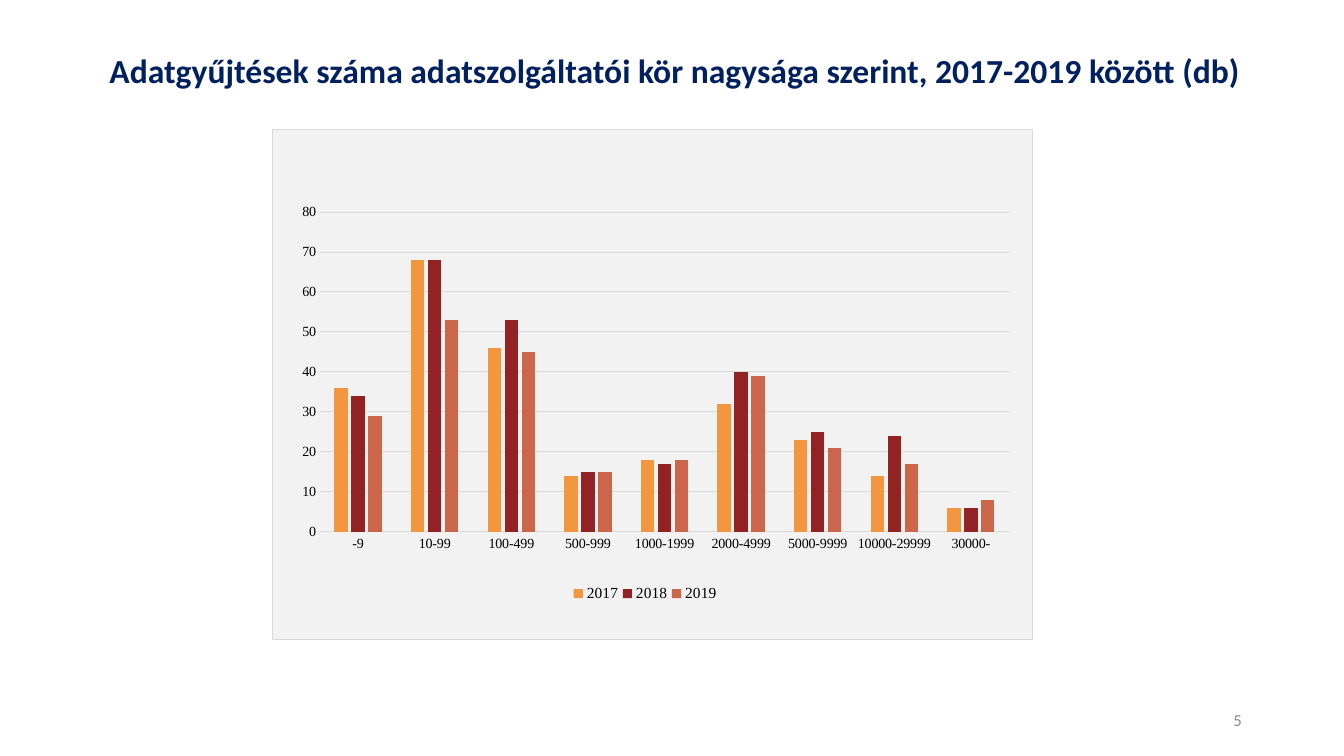
from pptx import Presentation
from pptx.chart.data import CategoryChartData
from pptx.dml.color import RGBColor
from pptx.enum.chart import XL_CHART_TYPE, XL_LEGEND_POSITION, XL_TICK_MARK
from pptx.enum.text import MSO_ANCHOR, PP_ALIGN
from pptx.oxml import parse_xml
from pptx.oxml.ns import nsdecls
from pptx.util import Cm, Pt

NAVY = RGBColor(0x00, 0x20, 0x60)
GREY = RGBColor(0x8C, 0x8C, 0x8C)
BLACK = RGBColor(0x00, 0x00, 0x00)
PANEL = RGBColor(0xF2, 0xF2, 0xF2)
RULE = RGBColor(0xD9, 0xD9, 0xD9)
ORANGE = RGBColor(0xF2, 0x96, 0x3F)
DARK_RED = RGBColor(0x92, 0x22, 0x24)
BRICK = RGBColor(0xCB, 0x66, 0x4B)

RESPONDENT_GROUPS = ["-9", "10-99", "100-499", "500-999", "1000-1999",
                     "2000-4999", "5000-9999", "10000-29999", "30000-"]
YEARS = [
    ("2017", ORANGE, [36, 68, 46, 14, 18, 32, 23, 14, 6]),
    ("2018", DARK_RED, [34, 68, 53, 15, 17, 40, 25, 24, 6]),
    ("2019", BRICK, [29, 53, 45, 15, 18, 39, 21, 17, 8]),
]


def set_font(font, name, size, color, bold=False):
    font.name = name
    font.size = Pt(size)
    font.bold = bold
    font.color.rgb = color


def set_line(line, color):
    line.color.rgb = color
    line.width = Pt(0.75)


def add_text(slide, box, text, size, color, alignment, bold=False):
    frame = slide.shapes.add_textbox(*box).text_frame
    frame.word_wrap = True
    frame.vertical_anchor = MSO_ANCHOR.MIDDLE
    paragraph = frame.paragraphs[0]
    paragraph.text = text
    paragraph.alignment = alignment
    paragraph.line_spacing = 0.9
    set_font(paragraph.font, "Calibri", size, color, bold)


def set_layout(parent, index, target="", **fractions):
    """Place a chart part by fractions of the chart area."""
    for layout in parent.xpath("c:layout"):
        parent.remove(layout)
    modes = "".join(f'<c:{axis}Mode val="edge"/>' for axis in "xy")
    sizes = "".join(f'<c:{key} val="{value}"/>' for key, value in fractions.items())
    parent.insert(index, parse_xml(
        f'<c:layout {nsdecls("c")}><c:manualLayout>{target}{modes}{sizes}'
        '</c:manualLayout></c:layout>'))


def fill_chart_area(chart):
    area = parse_xml(
        f'<c:spPr {nsdecls("c", "a")}>'
        f'<a:solidFill><a:srgbClr val="{PANEL}"/></a:solidFill>'
        f'<a:ln w="{Pt(0.75)}"><a:solidFill><a:srgbClr val="{RULE}"/></a:solidFill></a:ln>'
        '</c:spPr>')
    chart.element.xpath("c:chart")[0].addnext(area)


def style_axes(chart):
    for axis in (chart.category_axis, chart.value_axis):
        axis.major_tick_mark = axis.minor_tick_mark = XL_TICK_MARK.NONE
        set_font(axis.tick_labels.font, "Times New Roman", 10, BLACK)
    set_line(chart.category_axis.format.line, RULE)
    value_axis = chart.value_axis
    value_axis.format.line.fill.background()
    value_axis.minimum_scale, value_axis.maximum_scale = 0, 80
    value_axis.major_unit = 10
    value_axis.has_major_gridlines = True
    set_line(value_axis.major_gridlines.format.line, RULE)


def add_survey_chart(slide, box):
    data = CategoryChartData()
    data.categories = RESPONDENT_GROUPS
    for year, _, counts in YEARS:
        data.add_series(year, counts)
    chart = slide.shapes.add_chart(XL_CHART_TYPE.COLUMN_CLUSTERED, *box, data).chart
    chart.has_title = False
    set_font(chart.font, "Times New Roman", 10, BLACK)
    fill_chart_area(chart)
    style_axes(chart)

    plot = chart.plots[0]
    plot.vary_by_categories = False
    plot.gap_width = 219
    plot.overlap = -27
    for series, (_, color, _) in zip(plot.series, YEARS):
        series.format.fill.solid()
        series.format.fill.fore_color.rgb = color

    chart.has_legend = True
    chart.legend.position = XL_LEGEND_POSITION.BOTTOM
    chart.legend.include_in_layout = False
    set_font(chart.legend.font, "Times New Roman", 11, BLACK)

    set_layout(chart.element.xpath(".//c:plotArea")[0], 0,
               '<c:layoutTarget val="inner"/>', x=0.062, y=0.162, w=0.907, h=0.627)
    set_layout(chart.element.xpath(".//c:legend")[0], 1, x=0.39, y=0.88, w=0.2, h=0.06)


def build_slide(presentation):
    slide = presentation.slides.add_slide(presentation.slide_layouts[6])
    add_text(slide, (Cm(1.42), Cm(0.74), Cm(31.17), Cm(2.18)),
             "Adatgyűjtések száma adatszolgáltatói kör nagysága szerint, "
             "2017-2019 között (db)", 24, NAVY, PP_ALIGN.CENTER, bold=True)
    add_survey_chart(slide, (Cm(6.86), Cm(3.25), Cm(19.18), Cm(12.88)))
    add_text(slide, (Cm(23.93), Cm(17.65), Cm(7.62), Cm(1.02)),
             "5", 12, GREY, PP_ALIGN.RIGHT)


def main():
    presentation = Presentation()
    presentation.slide_width, presentation.slide_height = Cm(33.87), Cm(19.05)
    build_slide(presentation)
    presentation.save("out.pptx")


if __name__ == "__main__":
    main()
